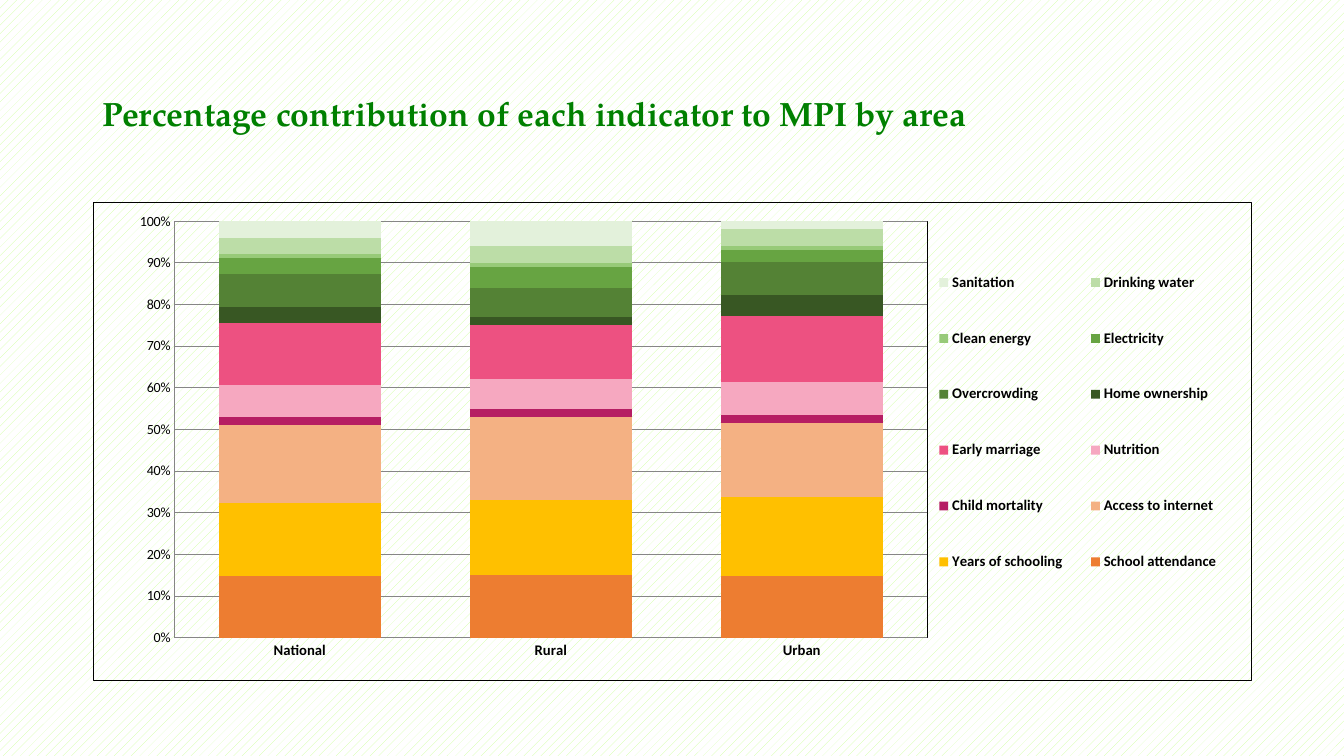
import pptx
import pptx.chart.data
import pptx.dml.color
import pptx.enum.chart
import pptx.enum.dml
import pptx.enum.text
import pptx.oxml
import pptx.oxml.ns
import pptx.util

Inches = pptx.util.Inches
Pt = pptx.util.Pt
qn = pptx.oxml.ns.qn

COLORS = {"title": "008000", "text": "000000", "border": "000000",
          "grid": "868686", "dots": "CCFF99", "back": "FFFFFF"}
AREAS = ["National", "Rural", "Urban"]
# Indicator, share in each area, colour
SHARES = [
    ("School attendance", (15, 15, 15), "ED7D31"),
    ("Years of schooling", (18, 18, 19), "FFC000"),
    ("Access to internet", (19, 20, 18), "F4B183"),
    ("Child mortality", (2, 2, 2), "B61E63"),
    ("Nutrition", (8, 7, 8), "F6A8C0"),
    ("Early marriage", (15, 13, 16), "ED5181"),
    ("Home ownership", (4, 2, 5), "385723"),
    ("Overcrowding", (8, 7, 8), "548235"),
    ("Electricity", (4, 5, 3), "67A442"),
    ("Clean energy", (1, 1, 1), "97CA78"),
    ("Drinking water", (4, 4, 4), "BCDDA7"),
    ("Sanitation", (4, 6, 2), "E3F1DB"),
]


def rgb(code):
    return pptx.dml.color.RGBColor.from_string(code)


def style(font, name, size, color, bold=False):
    font.name, font.size, font.bold = name, Pt(size), bold
    font.color.rgb = rgb(color)


def layout(x, y, wide, high, inner=False):
    """Manual chart layout, in shares of the chart's size."""
    target = '<c:layoutTarget val="inner"/>' if inner else ""
    return pptx.oxml.parse_xml(
        f'<c:layout {pptx.oxml.ns.nsdecls("c")}><c:manualLayout>{target}'
        '<c:xMode val="edge"/><c:yMode val="edge"/>'
        f'<c:x val="{x}"/><c:y val="{y}"/><c:w val="{wide}"/><c:h val="{high}"/>'
        '</c:manualLayout></c:layout>')


def frame():
    """Thin outline without fill for a chart part."""
    return pptx.oxml.parse_xml(
        f'<c:spPr {pptx.oxml.ns.nsdecls("c", "a")}><a:noFill/>'
        f'<a:ln w="{Pt(0.75)}"><a:solidFill><a:srgbClr val="{COLORS["border"]}"/>'
        '</a:solidFill></a:ln></c:spPr>')


def clear(part):
    for old in part.findall(qn("c:layout")):
        part.remove(old)


def paint_back(slide):
    fill = slide.background.fill
    fill.patterned()
    fill.pattern = pptx.enum.dml.MSO_PATTERN.PERCENT_20
    fill.fore_color.rgb = rgb(COLORS["dots"])
    fill.back_color.rgb = rgb(COLORS["back"])


def add_title(slide, left, top, wide, high):
    title = slide.shapes.title
    title.left, title.top, title.width, title.height = left, top, wide, high
    frame = title.text_frame
    frame.word_wrap = True
    frame.auto_size = pptx.enum.text.MSO_AUTO_SIZE.NONE
    frame.vertical_anchor = pptx.enum.text.MSO_ANCHOR.TOP
    frame.margin_top = 0
    para = frame.paragraphs[0]
    para.alignment = pptx.enum.text.PP_ALIGN.LEFT
    para.line_spacing = 0.9
    run = para.add_run()
    run.text = "Percentage contribution of each indicator to MPI by area"
    style(run.font, "TeX Gyre Pagella", 24, COLORS["title"], True)


def style_axes(chart):
    for axis, size, bold in ((chart.category_axis, 10.5, True),
                             (chart.value_axis, 10, False)):
        style(axis.tick_labels.font, "Calibri", size, COLORS["text"], bold)
        axis.major_tick_mark = pptx.enum.chart.XL_TICK_MARK.NONE
        axis.minor_tick_mark = pptx.enum.chart.XL_TICK_MARK.NONE
        axis.format.line.color.rgb = rgb(COLORS["grid"])
        axis.format.line.width = Pt(0.75)
    value = chart.value_axis
    value.minimum_scale, value.maximum_scale, value.major_unit = 0, 1, 0.1
    value.tick_labels.number_format = "0%"
    value.tick_labels.number_format_is_linked = False
    value.has_major_gridlines = True
    value.major_gridlines.format.line.color.rgb = rgb(COLORS["grid"])
    value.major_gridlines.format.line.width = Pt(0.75)


def add_shares(slide, left, top, wide, high):
    data = pptx.chart.data.CategoryChartData()
    data.categories = AREAS
    for name, vals, _ in SHARES:
        data.add_series(name, vals)
    kind = pptx.enum.chart.XL_CHART_TYPE.COLUMN_STACKED_100
    chart = slide.shapes.add_chart(kind, left, top, wide, high, data).chart
    chart.has_title = False
    style(chart.font, "Calibri", 10, COLORS["text"])
    style_axes(chart)

    # Columns
    plot = chart.plots[0]
    plot.gap_width, plot.overlap, plot.vary_by_categories = 55, 100, False
    for series, (_, _, color) in zip(plot.series, SHARES):
        series.format.fill.solid()
        series.format.fill.fore_color.rgb = rgb(color)

    # Legend in two columns
    chart.has_legend = True
    legend = chart.legend
    legend.position = pptx.enum.chart.XL_LEGEND_POSITION.RIGHT
    legend.include_in_layout = False
    style(legend.font, "Calibri", 10.5, COLORS["text"], True)
    key = legend._element
    clear(key)
    key.find(qn("c:legendPos")).addnext(layout(0.71, 0.07, 0.28, 0.78))

    # Plot position and outlines
    body = chart.element.find(qn("c:chart"))
    area = body.find(qn("c:plotArea"))
    clear(area)
    area.insert(0, layout(0.07, 0.04, 0.65, 0.87, inner=True))
    area.append(frame())
    body.addnext(frame())


def main():
    deck = pptx.Presentation()
    deck.slide_width, deck.slide_height = Inches(13.33), Inches(7.5)
    slide = deck.slides.add_slide(deck.slide_layouts[5])
    left, wide = Inches(0.92), Inches(11.5)
    paint_back(slide)
    add_title(slide, left, Inches(0.97), wide, Inches(0.77))
    add_shares(slide, left, Inches(2), wide, Inches(4.76))
    deck.save("out.pptx")


if __name__ == "__main__":
    main()
